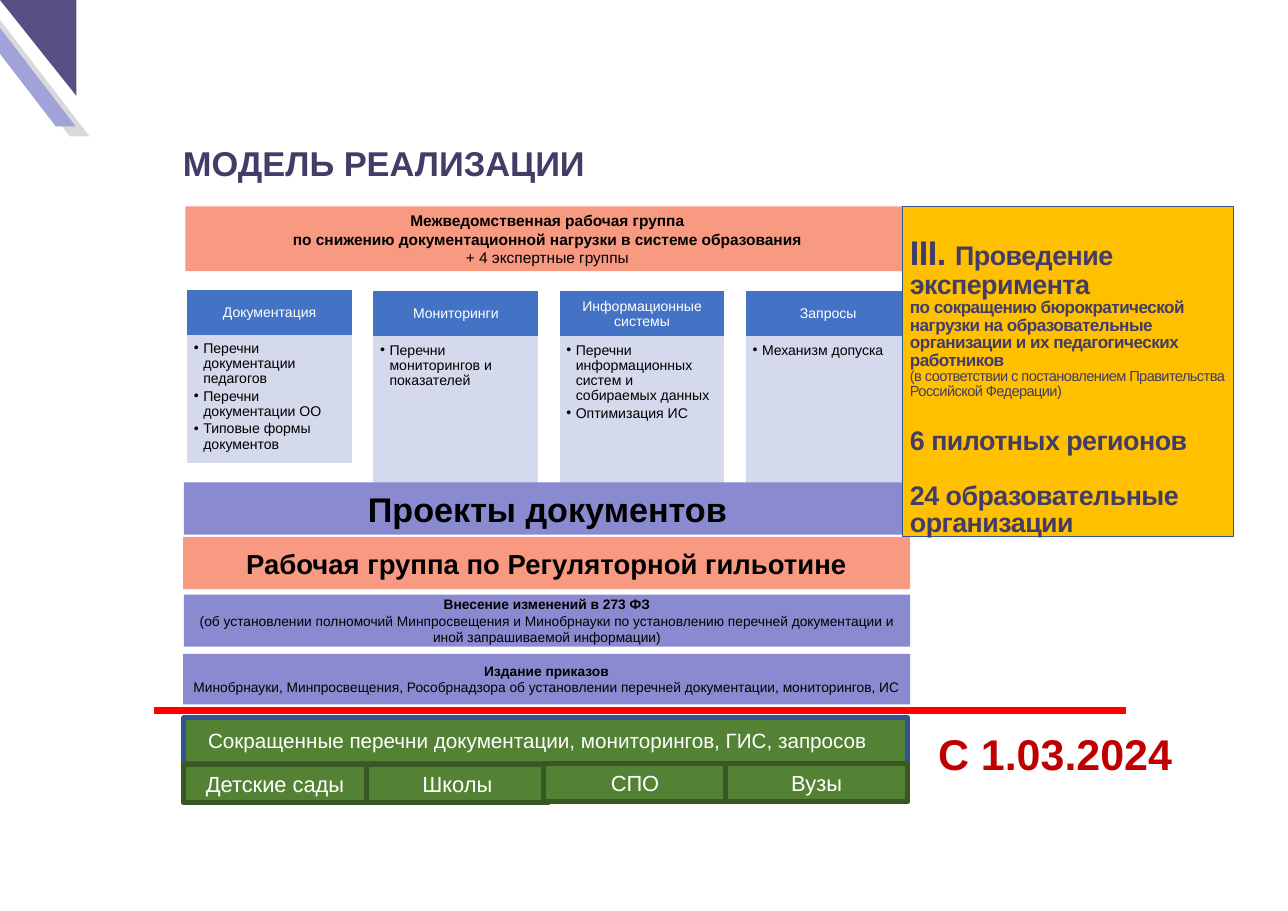
from lxml import etree
from pptx import Presentation
from pptx import util as u
from pptx.dml.color import RGBColor
from pptx.enum import shapes, text
from pptx.oxml.ns import qn

BLACK = RGBColor(0x00, 0x00, 0x00)
WHITE = RGBColor(0xFF, 0xFF, 0xFF)
GRAY = RGBColor(0xD9, 0xD9, 0xD9)
LILAC = RGBColor(0xA2, 0xA2, 0xDA)
PLUM = RGBColor(0x56, 0x50, 0x87)
INK = RGBColor(0x42, 0x3D, 0x67)
SALMON = RGBColor(0xF7, 0x9A, 0x81)
VIOLET = RGBColor(0x8A, 0x8A, 0xD0)
BLUE = RGBColor(0x44, 0x72, 0xC4)
PALE = RGBColor(0xD4, 0xD9, 0xEC)
NAVY = RGBColor(0x32, 0x54, 0x91)
GREEN = RGBColor(0x54, 0x82, 0x35)
DARK_GREEN = RGBColor(0x38, 0x57, 0x23)
RED = RGBColor(0xFF, 0x00, 0x00)
CRIMSON = RGBColor(0xC0, 0x00, 0x00)
AMBER = RGBColor(0xFF, 0xC0, 0x00)

PX = 9144
CENTER = text.PP_ALIGN.CENTER
LEFT = text.PP_ALIGN.LEFT
TOP = text.MSO_ANCHOR.TOP
MIDDLE = text.MSO_ANCHOR.MIDDLE
RECT = shapes.MSO_SHAPE.RECTANGLE


class Deck:
    """Draws styled elements on the current slide, with lengths in px (100 to the inch)."""

    font = "Arial"

    def __init__(self, width, height):
        self.presentation = Presentation()
        self.presentation.slide_width = u.Emu(width * PX)
        self.presentation.slide_height = u.Emu(height * PX)
        self.slide = self.presentation.slides.add_slide(self.presentation.slide_layouts[6])

    def shape(self, box, fill, line=None, weight=1, kind=RECT):
        shape = self.slide.shapes.add_shape(kind, *[u.Emu(v * PX) for v in box])
        shape.shadow.inherit = False
        shape.fill.solid()
        shape.fill.fore_color.rgb = fill
        if line is None:
            shape.line.fill.background()
        else:
            shape.line.color.rgb = line
            shape.line.width = u.Pt(weight)
        return shape

    def ribbon(self, box, fill):
        shape = self.shape(box, fill, kind=shapes.MSO_SHAPE.PARALLELOGRAM)
        shape.adjustments[0] = 0.83
        shape._element.spPr.find(qn("a:xfrm")).set("flipH", "1")

    def frame(self, shape, insets=(10, 5, 10, 5), anchor=MIDDLE, wrap=True):
        frame = shape.text_frame
        frame.word_wrap = wrap
        frame.vertical_anchor = anchor
        (frame.margin_left, frame.margin_top,
         frame.margin_right, frame.margin_bottom) = [u.Emu(v * PX) for v in insets]
        return frame

    def paragraph(self, frame, content, size, color, bold=False, align=CENTER,
                  spacing=None, before=None, after=None, bullet=False, tracking=None):
        paragraph = frame.paragraphs[0]
        if paragraph.runs:
            paragraph = frame.add_paragraph()
        paragraph.alignment = align
        paragraph.line_spacing = spacing
        if before:
            paragraph.space_before = u.Pt(before)
        if after:
            paragraph.space_after = u.Pt(after)
        if bullet:
            properties = paragraph._p.get_or_add_pPr()
            properties.set("marL", str(12 * PX))
            properties.set("indent", str(-12 * PX))
            etree.SubElement(properties, qn("a:buFont")).set("typeface", self.font)
            etree.SubElement(properties, qn("a:buChar")).set("char", "•")
        font = paragraph.font
        font.name, font.size, font.bold = self.font, u.Pt(size), bold
        font.color.rgb = color
        if tracking:
            font._rPr.set("spc", str(tracking))
        paragraph.add_run().text = content
        return paragraph

    def band(self, box, fill, lines, size, color=BLACK, line=None, weight=1,
             insets=(10, 5, 10, 5)):
        frame = self.frame(self.shape(box, fill, line, weight), insets)
        for content, bold in lines:
            self.paragraph(frame, content, size, color, bold)

    def card(self, left, top, head_height, body_height, heading, items):
        head = self.shape((left, top, 210, head_height), BLUE, BLUE)
        self.paragraph(self.frame(head, (10, 6, 10, 6)), heading, 13, WHITE, spacing=0.9)
        body = self.shape((left, top + head_height, 210, body_height), PALE, PALE)
        frame = self.frame(body, (8, 8, 10, 11), TOP)
        for item in items:
            self.paragraph(frame, item, 13, BLACK, align=LEFT, spacing=0.9, after=2, bullet=True)

    def label(self, box, content, size, color, wrap=True):
        shape = self.slide.shapes.add_textbox(*[u.Emu(v * PX) for v in box])
        self.paragraph(self.frame(shape, anchor=TOP, wrap=wrap), content, size, color, True, LEFT)

    def rule(self, left, right, y, color, weight):
        ends = [u.Emu(v * PX) for v in (left, y, right, y)]
        connector = self.slide.shapes.add_connector(shapes.MSO_CONNECTOR.STRAIGHT, *ends)
        connector.line.color.rgb = color
        connector.line.width = u.Pt(weight)
        etree.SubElement(connector._element.spPr, qn("a:effectLst"))

    def panel(self, box, lead, lead_size, lines):
        frame = self.frame(self.shape(box, AMBER, NAVY), (10, 40, 10, 9), TOP)
        for content, size, bold, before in lines:
            paragraph = self.paragraph(frame, content, size, INK, bold, LEFT, 0.85, before,
                                       tracking=-50)
            if lead:
                paragraph.runs[0].text = lead
                paragraph.runs[0].font.size = u.Pt(lead_size)
                paragraph.add_run().text = content
                lead = None


def main():
    deck = Deck(1653, 1169)
    deck.ribbon((-35, 13, 150, 162), GRAY)
    deck.ribbon((-53, 0, 150, 162), LILAC)
    corner = deck.shape((0, 0, 98, 123), PLUM, kind=shapes.MSO_SHAPE.RIGHT_TRIANGLE)
    corner.rotation = 180

    deck.label((225, 177, 1017, 64), "МОДЕЛЬ РЕАЛИЗАЦИИ", 31.8, INK)
    deck.band((238, 265, 929, 83), SALMON, [
        ("Межведомственная рабочая группа", True),
        ("по снижению документационной нагрузки в системе образования", True),
        ("+ 4 экспертные группы", False)], 14.3)

    cards = [
        (373, 57, 164, "Документация", ["Перечни документации педагогов",
                                        "Перечни документации ОО",
                                        "Типовые формы документов"]),
        (374, 58, 188, "Мониторинги", ["Перечни мониторингов и показателей"]),
        (374, 58, 188, "Информационные системы", [
            "Перечни информационных систем и собираемых данных", "Оптимизация ИС"]),
        (374, 58, 188, "Запросы", ["Механизм допуска"]),
    ]
    for column, card in enumerate(cards):
        deck.card(241 + 239 * column, *card)

    deck.band((235, 689, 933, 67), SALMON,
              [("Рабочая группа по Регуляторной гильотине", True)], 25.4)
    deck.band((236, 763, 932, 67), VIOLET, [
        ("Внесение изменений в 273 ФЗ", True),
        ("(об установлении полномочий Минпросвещения и Минобрнауки по установлению "
         "перечней документации и иной запрашиваемой информации)", False)], 12.7)
    deck.band((235, 839, 933, 65), VIOLET, [
        ("Издание приказов", True),
        ("Минобрнауки, Минпросвещения, Рособрнадзора об установлении перечней "
         "документации, мониторингов, ИС", False)], 12.7)

    deck.rule(198, 1445, 912, RED, 6)
    deck.band((236, 921, 929, 59), GREEN,
              [("Сокращенные перечни документации, мониторингов, ГИС, запросов", False)],
              19.1, WHITE, NAVY, 4.5, (10, 5, 32, 5))
    levels = [(236, 981, "Детские сады"), (470, 981, "Школы"),
              (698, 980, "СПО"), (931, 980, "Вузы")]
    for left, top, level in levels:
        deck.band((left, top, 234, 49), GREEN, [(level, False)], 20.2, WHITE, DARK_GREEN, 4.5)
    deck.label((1194, 929, 324, 77), "С 1.03.2024", 39.7, CRIMSON, wrap=False)

    deck.band((236, 619, 933, 67), VIOLET, [("Проекты документов", True)], 31.6)
    deck.panel((1158, 265, 425, 424), "III. ", 31.6, [
        ("Проведение эксперимента", 24.8, True, None),
        ("по сокращению бюрократической нагрузки на образовательные организации "
         "и их педагогических работников", 15.8, True, None),
        ("(в соответствии с постановлением Правительства Российской Федерации)",
         13.5, False, None),
        ("6 пилотных регионов", 24.8, True, 27),
        ("24 образовательные организации", 24.8, True, 25)])
    deck.presentation.save("out.pptx")


if __name__ == "__main__":
    main()
